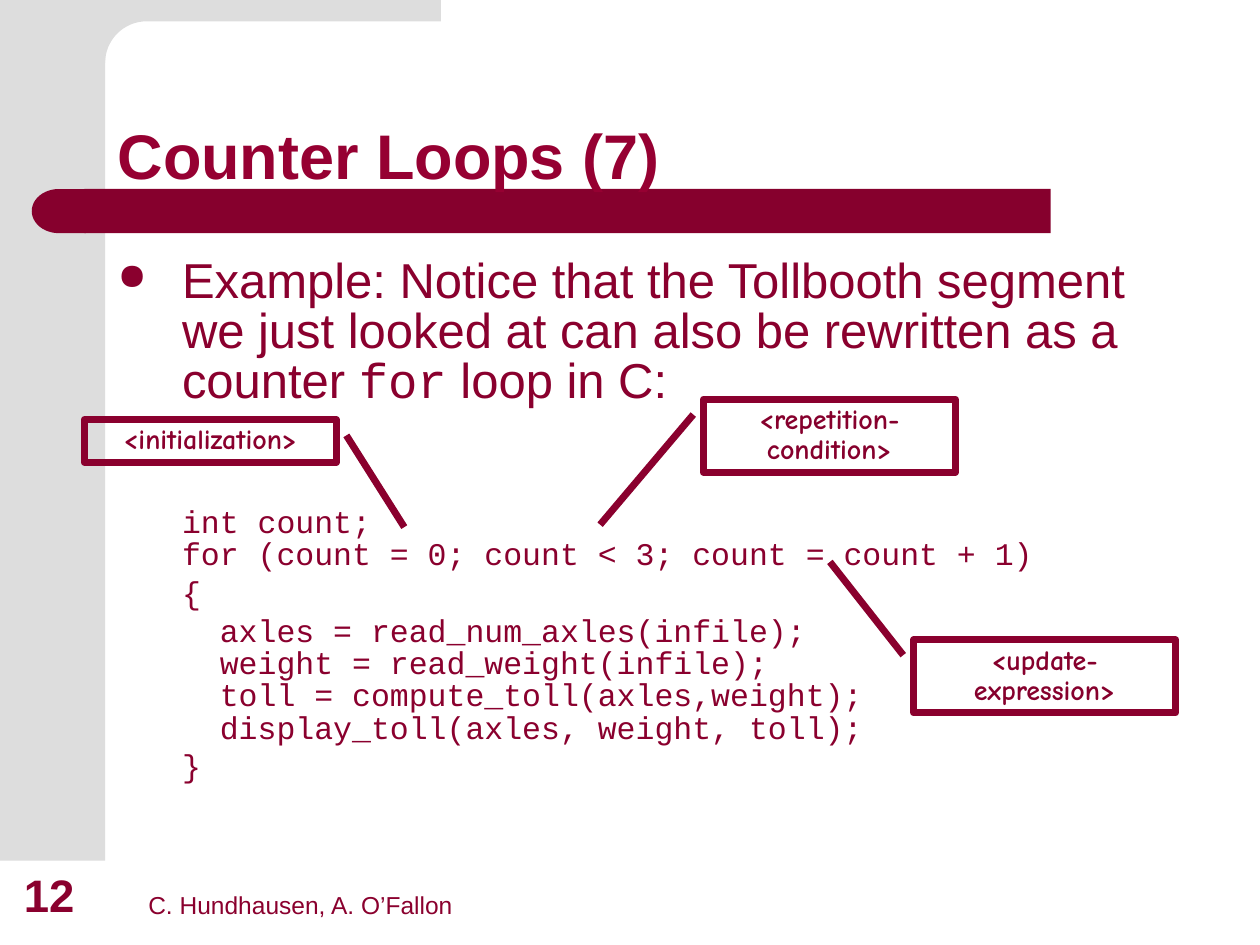
"""Build the Counter Loops slide with its annotated for-loop example."""
from math import cos, pi, sin

from lxml.etree import SubElement
from pptx import Presentation
from pptx.dml.color import RGBColor
from pptx.enum.shapes import MSO_SHAPE
from pptx.enum.text import MSO_ANCHOR, PP_ALIGN
from pptx.oxml.ns import qn
from pptx.util import Cm, Pt

THEME = {
    "panel": RGBColor.from_string("DDDDDD"),
    "bar": RGBColor.from_string("86002D"),
    "text": RGBColor.from_string("8A002E"),
    "title": RGBColor.from_string("960032"),
    "heading": {"name": "Arial", "size": Pt(36), "bold": True},
    "body": {"name": "Arial", "size": Pt(28)},
    "keyword": {"name": "Courier New", "size": Pt(28)},
    "code": {"name": "Courier New", "size": Pt(18)},
    "callout": {"name": "Comic Neue", "size": Pt(16), "bold": True},
    "footer": {"name": "Arial", "size": Pt(14)},
    "number": {"name": "Arial", "size": Pt(26), "bold": True},
}

BOTTOM_TEXTS = [
    ("C. Hundhausen, A. O’Fallon", (2.74, 17.35, 9.53, 1.32), "footer", "text", 1),
    ("12", (0.23, 17.35, 1.63, 1.35), "number", "text", 1),
    ("Counter Loops (7)", (2.12, 0.84, 22.02, 3.18), "heading", "title", 0.9),
]
SENTENCE = [
    ("Example: Notice that the Tollbooth segment we just looked at "
     "can also be rewritten as a counter ", "body"),
    ("for", "keyword"),
    (" loop in C:", "body"),
]
CODE = [
    ["int count;", "for (count = 0; count < 3; count = count + 1)"],
    ["{"],
    ["  axles = read_num_axles(infile);", "  weight = read_weight(infile);",
     "  toll = compute_toll(axles,weight);", "  display_toll(axles, weight, toll);"],
    ["}"],
]
CALLOUTS = [
    ("<initialization>", (1.7, 8.46, 5.08, 0.86), "text", (0.37, 1.04, 2.52, 1.27)),
    ("<repetition-condition>", (14.18, 8.05, 5.08, 1.47), "bar", (0.21, -0.04, 1.72, -0.41)),
    ("<update-expression>", (18.42, 12.9, 5.28, 1.47), "bar", (0.21, -0.04, -1.07, -0.32)),
]
BODY_BOX = (2.12, 5.08, 21.36, 10.34)
BODY_INDENT = Cm(1.3)
PANEL = (0, 0, 2.12, 17.35)
BAR = (1.7, 3.81, 19.48, 0.89)
BAR_CAP = (0.64, 3.81, 1.09, 0.89)
STRIP_RIGHT, STRIP_BOTTOM, CORNER_RADIUS, CORNER_STEPS = 8.89, 0.43, 0.84, 16


def apply(target, values):
    for name, value in values.items():
        setattr(target, name, value)


def add_run(paragraph, text, style, color="text"):
    run = paragraph.add_run()
    run.text = text
    apply(run.font, THEME[style])
    run.font.color.rgb = THEME[color]


def paint(shape, color):
    shape.shadow.inherit = False
    shape.fill.solid()
    shape.fill.fore_color.rgb = THEME[color]
    shape.line.fill.background()


def add_filled(slide, kind, box, color):
    shape = slide.shapes.add_shape(kind, *map(Cm, box))
    paint(shape, color)
    return shape


def add_background(slide):
    add_filled(slide, MSO_SHAPE.RECTANGLE, PANEL, "panel")
    edge = PANEL[2]
    angles = [pi / 2 * step / CORNER_STEPS for step in range(CORNER_STEPS + 1)]
    curve = [(edge + CORNER_RADIUS * (1 - sin(angle)),
              STRIP_BOTTOM + CORNER_RADIUS * (1 - cos(angle))) for angle in angles]
    outline = [(STRIP_RIGHT, 0), (STRIP_RIGHT, STRIP_BOTTOM), *curve, (edge, 0)]
    points = [(Cm(x), Cm(y)) for x, y in outline]
    builder = slide.shapes.build_freeform(*points[0])
    builder.add_line_segments(points[1:], close=True)
    paint(builder.convert_to_shape(), "panel")
    add_filled(slide, MSO_SHAPE.RECTANGLE, BAR, "bar")
    add_filled(slide, MSO_SHAPE.FLOWCHART_DELAY, BAR_CAP, "bar").rotation = 180


def add_bullet(paragraph):
    properties = paragraph._p.get_or_add_pPr()
    properties.set("indent", str(-BODY_INDENT))
    color = SubElement(properties, qn("a:buClr"))
    SubElement(color, qn("a:srgbClr"), val=str(THEME["text"]))
    SubElement(properties, qn("a:buSzPct"), val="75000")
    SubElement(properties, qn("a:buChar"), char="●")


def add_body(slide):
    frame = slide.shapes.add_textbox(*map(Cm, BODY_BOX)).text_frame
    frame.word_wrap = True
    sentence = frame.paragraphs[0]
    sentence.line_spacing = 0.85
    add_bullet(sentence)
    for text, style in SENTENCE:
        add_run(sentence, text, style)
    for index, lines in enumerate(CODE):
        paragraph = frame.add_paragraph()
        apply(paragraph, {"line_spacing": 0.85, "space_before": Pt(3.6 if index else 57)})
        for position, line in enumerate(lines):
            if position:
                paragraph.add_line_break()
            add_run(paragraph, line, "code")
    for paragraph in frame.paragraphs:
        paragraph._p.get_or_add_pPr().set("marL", str(BODY_INDENT))


def add_bottom_text(slide, text, box, style, color, spacing):
    frame = slide.shapes.add_textbox(*map(Cm, box)).text_frame
    apply(frame, {"word_wrap": True, "vertical_anchor": MSO_ANCHOR.BOTTOM})
    frame.paragraphs[0].line_spacing = spacing
    add_run(frame.paragraphs[0], text, style, color)


def add_callout(slide, text, box, color, pointer):
    shape = slide.shapes.add_shape(MSO_SHAPE.LINE_CALLOUT_1, *map(Cm, box))
    shape.shadow.inherit = False
    shape.fill.background()
    shape.line.color.rgb = THEME["text"]
    shape.line.width = Pt(4)
    for index, value in enumerate(pointer):
        shape.adjustments[index] = value
    frame = shape.text_frame
    apply(frame, {"word_wrap": True, "vertical_anchor": MSO_ANCHOR.TOP})
    paragraph = frame.paragraphs[0]
    apply(paragraph, {"alignment": PP_ALIGN.CENTER, "line_spacing": 0.9})
    add_run(paragraph, text, "callout", color)


def main():
    presentation = Presentation()
    apply(presentation, {"slide_width": Cm(25.4), "slide_height": Cm(19.05)})
    slide = presentation.slides.add_slide(presentation.slide_layouts[6])
    add_background(slide)
    for item in BOTTOM_TEXTS:
        add_bottom_text(slide, *item)
    add_body(slide)
    for item in CALLOUTS:
        add_callout(slide, *item)
    presentation.save("out.pptx")


if __name__ == "__main__":
    main()
